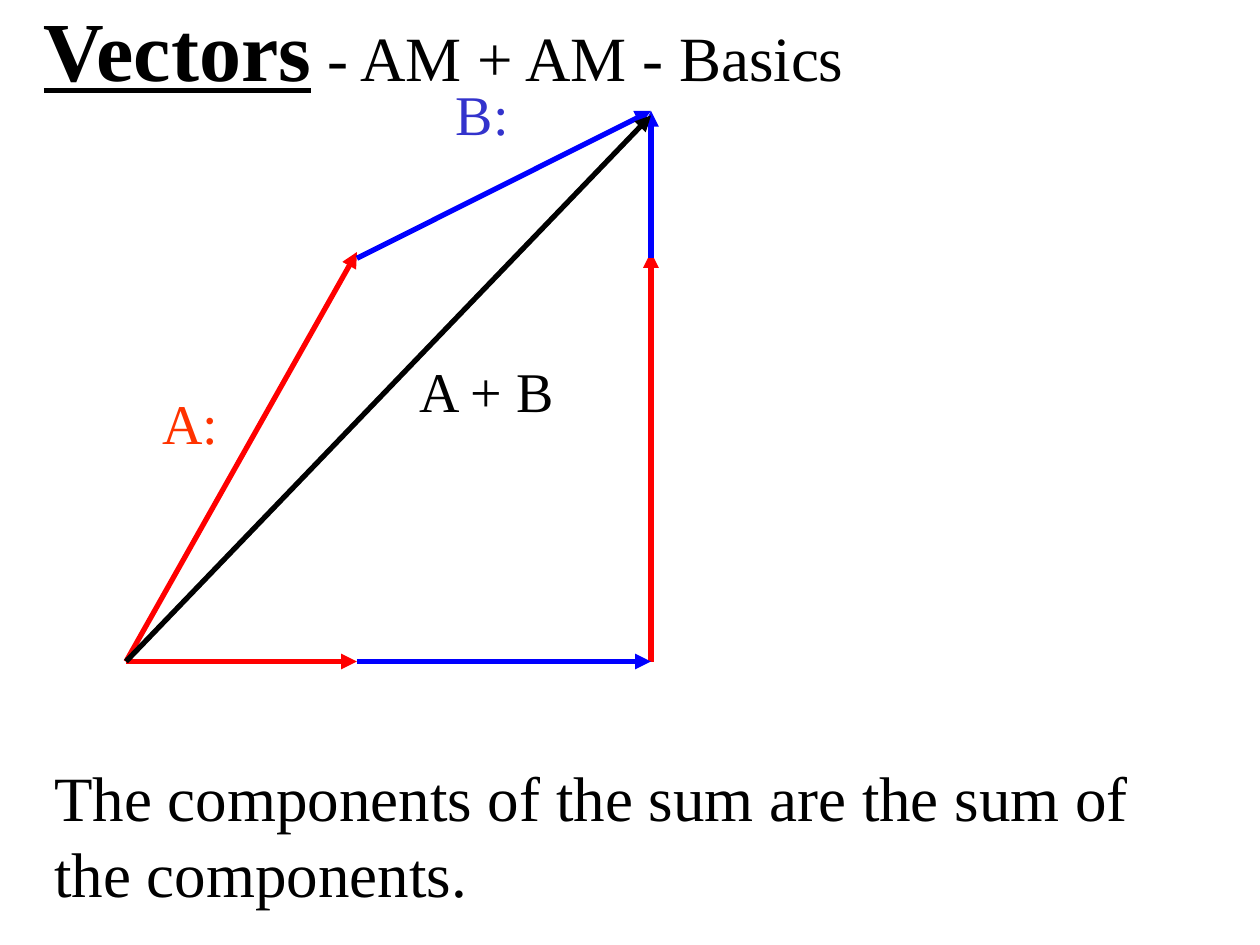
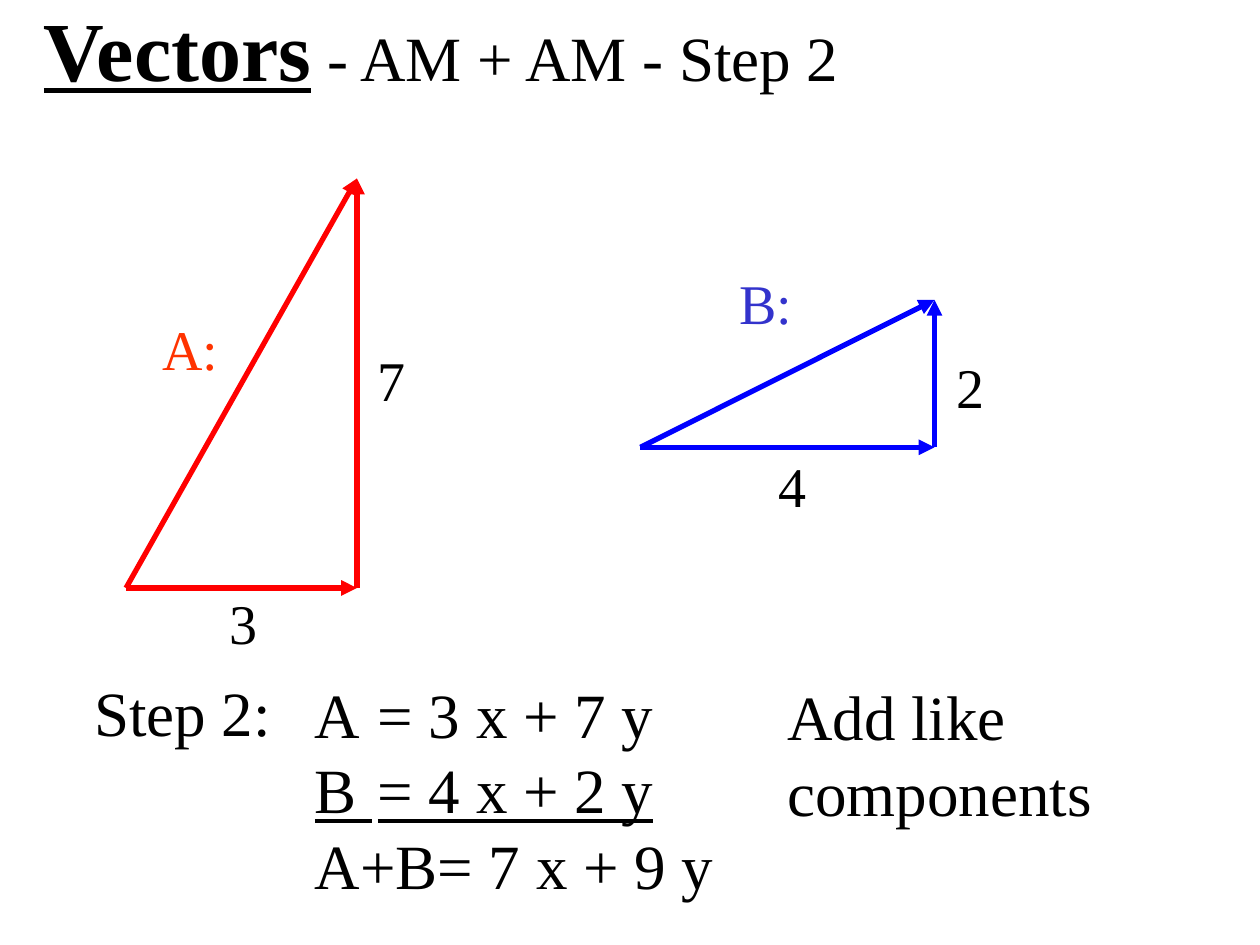
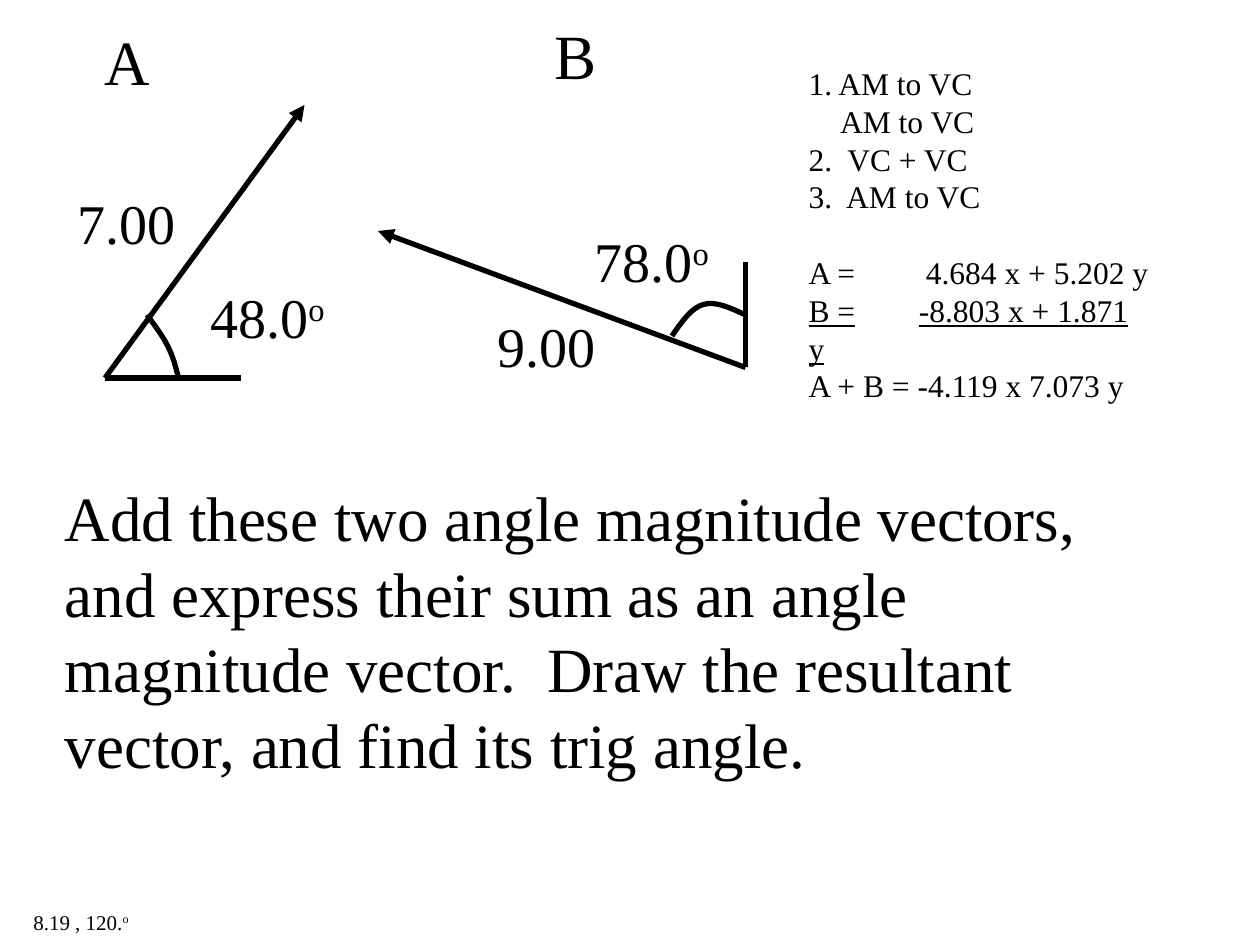
"""Build three slides on adding angle magnitude vectors."""
from lxml.etree import SubElement
from pptx import Presentation
from pptx.dml.color import RGBColor
from pptx.enum.shapes import MSO_CONNECTOR
from pptx.enum.text import MSO_AUTO_SIZE
from pptx.oxml.ns import qn
from pptx.util import Pt

COLOURS = {"black": "000000", "red": "FF0000", "blue": "0000FF",
           "label A": "FF3300", "label B": "3333CC", "white": "FFFFFF"}
FONT = "Times New Roman"
LINE_WIDTH = 3
LINE_PITCH = 1.2
INSET = 3.6
CURVE_STEPS = 8

VECTOR_A = (132, -234)
VECTOR_B = (168, -84.2)
UNDERLINED = {"underline": True}
HEADING = {"size": Pt(48), "bold": True, "underline": True}
DEGREE = ("o", {"baseline": "30000"})


def legs(colour, start, vector):
    """Return the horizontal and vertical components and the vector itself."""
    (x, y), (run, rise) = start, vector
    corner, tip = (x + run, y), (x + run, y + rise)
    return [(colour, start, corner, True), (colour, corner, tip, True),
            (colour, start, tip, True)]


def title(text, width):
    """Return the title that heads a topic slide."""
    return (18, -5, width, 36, "black", [[("Vectors", HEADING), (f" - {text}", {})]])


SLIDES = [
    {
        "texts": [
            title("AM + AM - Basics", 479.5),
            (85.7, 218.2, 46.8, 32, "label A", ["A:"]),
            (253.4, 41.8, 44.6, 32, "label B", ["B:"]),
            (24, 430, 628.6, 36, "black",
             ["The components of the sum are the sum of", "the components."]),
            (232.6, 200.2, 92.9, 32, "black", ["A + B"]),
        ],
        "lines": [
            ("red", (72, 378), (204, 378), True),
            ("red", (372, 378), (372, 144), True),
            ("red", (72, 378), (204, 144), True),
            ("blue", (204, 378), (372, 378), True),
            ("blue", (372, 147.6), (372, 63.4), True),
            ("blue", (204, 147.6), (372, 63.4), True),
            ("black", (72, 378), (372, 66), True),
        ],
    },
    {
        "texts": [
            title("AM + AM - Step 2", 476.6),
            (85.7, 176.4, 46.8, 32, "label A", ["A:"]),
            (415.4, 149.8, 44.6, 32, "label B", ["B:"]),
            (46.8, 381.6, 115.2, 36, "black", ["Step 2:"]),
            (172.8, 382.3, 244, 36, "black",
             ["A \t= 3 x + 7 y", [("B \t= 4 x + 2 y", UNDERLINED)],
              "A+B= 7 x + 9 y"]),
            (208.8, 193.7, 30.2, 32, "black", ["7"]),
            (123.8, 332.6, 30.2, 32, "black", ["3"]),
            (437.8, 254.2, 30.2, 32, "black", ["4"]),
            (539.3, 198, 30.2, 32, "black", ["2"]),
            (442.8, 383.8, 188.6, 36, "black", ["Add like", "components"]),
        ],
        "lines": legs("red", (72, 336), VECTOR_A) + legs("blue", (366, 255.6), VECTOR_B),
    },
    {
        "texts": [
            (12, 516, 69.8, 12, "black", [[("8.19 , 120.", {}), DEGREE]]),
            (30, 270, 631.4, 36, "black",
             ["Add these two angle magnitude vectors, and express their sum as an "
              "angle magnitude vector.  Draw the resultant vector, and find its "
              "trig angle."], {"wrap": True}),
            (113, 157.7, 80.6, 32, "black", [[("48.0", {}), DEGREE]]),
            (37.4, 104.4, 70.6, 32, "black", ["7.00"]),
            (52.6, 9.4, 40.3, 36, "black", ["A"]),
            (309.6, 5.8, 38.2, 36, "black", ["B"]),
            (277.2, 174.2, 70.6, 32, "black", ["9.00"]),
            (332.6, 126, 80.6, 32, "black", [[("78.0", {}), DEGREE]]),
            (455, 33.1, 210.2, 18, "black",
             ["1. AM to VC", "AM to VC", "2.  VC + VC", "3.  AM to VC",
              "A =\t4.684 x + 5.202 y", [("B =\t-8.803 x + 1.871 y", UNDERLINED)],
              "A + B = -4.119 x 7.073 y"],
             {"indents": {1: 18}, "gaps": {4: 21.6}, "tabs": {4: 67, 5: 63}}),
        ],
        "lines": [
            ("black", (60, 216), (138, 216), False),
            ("black", (60, 216), (174, 60), True),
            ("black", (426, 150), (426, 210), False),
            ("black", (426, 210), (216, 132), True),
        ],
        "arcs": [
            [(84, 180), (88.5, 186), (93, 192), (96, 198),
             (99, 204), (100.5, 210), (102, 216)],
            [(384, 192), (389.5, 184), (395, 176), (402, 174),
             (409, 172), (417.5, 176), (426, 180)],
        ],
    },
]


def colour_of(name):
    return RGBColor.from_string(COLOURS[name])


def add_paragraph(paragraph, runs, size, colour):
    if isinstance(runs, str):
        runs = [(runs, {})]
    for text, extra in runs:
        run = paragraph.add_run()
        run.text = text
        run.font.color.rgb = colour_of(colour)
        formats = {"name": FONT, "size": Pt(size), **extra}
        baseline = formats.pop("baseline", None)
        for attribute, value in formats.items():
            setattr(run.font, attribute, value)
        if baseline:
            run._r.get_or_add_rPr().set("baseline", baseline)


def add_text(slide, left, top, width, size, colour, paragraphs, options=None):
    options = options or {}
    gaps, indents, tabs = (options.get(key, {}) for key in ("gaps", "indents", "tabs"))
    wrap = options.get("wrap", False)
    first = paragraphs[0]
    tallest = size if isinstance(first, str) else max(
        run[1].get("size", Pt(size)).pt for run in first)
    line_count = 4 if wrap else len(paragraphs)
    height = line_count * tallest * LINE_PITCH + sum(gaps.values()) + 2 * INSET
    shape = slide.shapes.add_textbox(Pt(left), Pt(top), Pt(width), Pt(height))
    frame = shape.text_frame
    frame.word_wrap = wrap
    frame.auto_size = MSO_AUTO_SIZE.SHAPE_TO_FIT_TEXT
    for index, runs in enumerate(paragraphs):
        paragraph = frame.add_paragraph() if index else frame.paragraphs[0]
        add_paragraph(paragraph, runs, size, colour)
        properties = paragraph._p.get_or_add_pPr()
        if index in gaps:
            paragraph.space_before = Pt(gaps[index])
        if index in indents:
            properties.set("marL", str(Pt(indents[index])))
        if index in tabs:
            tab_list = SubElement(properties, qn("a:tabLst"))
            SubElement(tab_list, qn("a:tab"), pos=str(Pt(tabs[index])), algn="l")


def style_line(line, colour):
    line.color.rgb = colour_of(colour)
    line.width = Pt(LINE_WIDTH)


def add_line(slide, colour, start, end, arrow):
    connector = slide.shapes.add_connector(
        MSO_CONNECTOR.STRAIGHT, *(Pt(value) for value in start + end))
    style_line(connector.line, colour)
    properties = connector._element.spPr
    if arrow:
        SubElement(properties.find(qn("a:ln")), qn("a:tailEnd"), type="triangle")
    SubElement(properties, qn("a:effectLst"))


def curve_points(controls):
    """Return points along joined cubic curves."""
    points = [controls[0]]
    for first in range(0, len(controls) - 1, 3):
        segment = controls[first:first + 4]
        for step in range(1, CURVE_STEPS + 1):
            t = step / CURVE_STEPS
            weights = ((1 - t) ** 3, 3 * t * (1 - t) ** 2, 3 * t * t * (1 - t), t ** 3)
            points.append(tuple(sum(weight * point[axis] for weight, point
                                    in zip(weights, segment)) for axis in (0, 1)))
    return points


def add_arc(slide, controls):
    start, *others = [(Pt(x), Pt(y)) for x, y in curve_points(controls)]
    builder = slide.shapes.build_freeform(*start)
    builder.add_line_segments(others, close=False)
    shape = builder.convert_to_shape()
    shape.shadow.inherit = False
    shape.fill.background()
    style_line(shape.line, "black")


def main():
    presentation = Presentation()
    presentation.slide_width, presentation.slide_height = Pt(720), Pt(540)
    for content in SLIDES:
        slide = presentation.slides.add_slide(presentation.slide_layouts[6])
        slide.background.fill.solid()
        slide.background.fill.fore_color.rgb = colour_of("white")
        for text in content["texts"]:
            add_text(slide, *text)
        for line in content["lines"]:
            add_line(slide, *line)
        for controls in content.get("arcs", []):
            add_arc(slide, controls)
    presentation.save("out.pptx")


if __name__ == "__main__":
    main()
